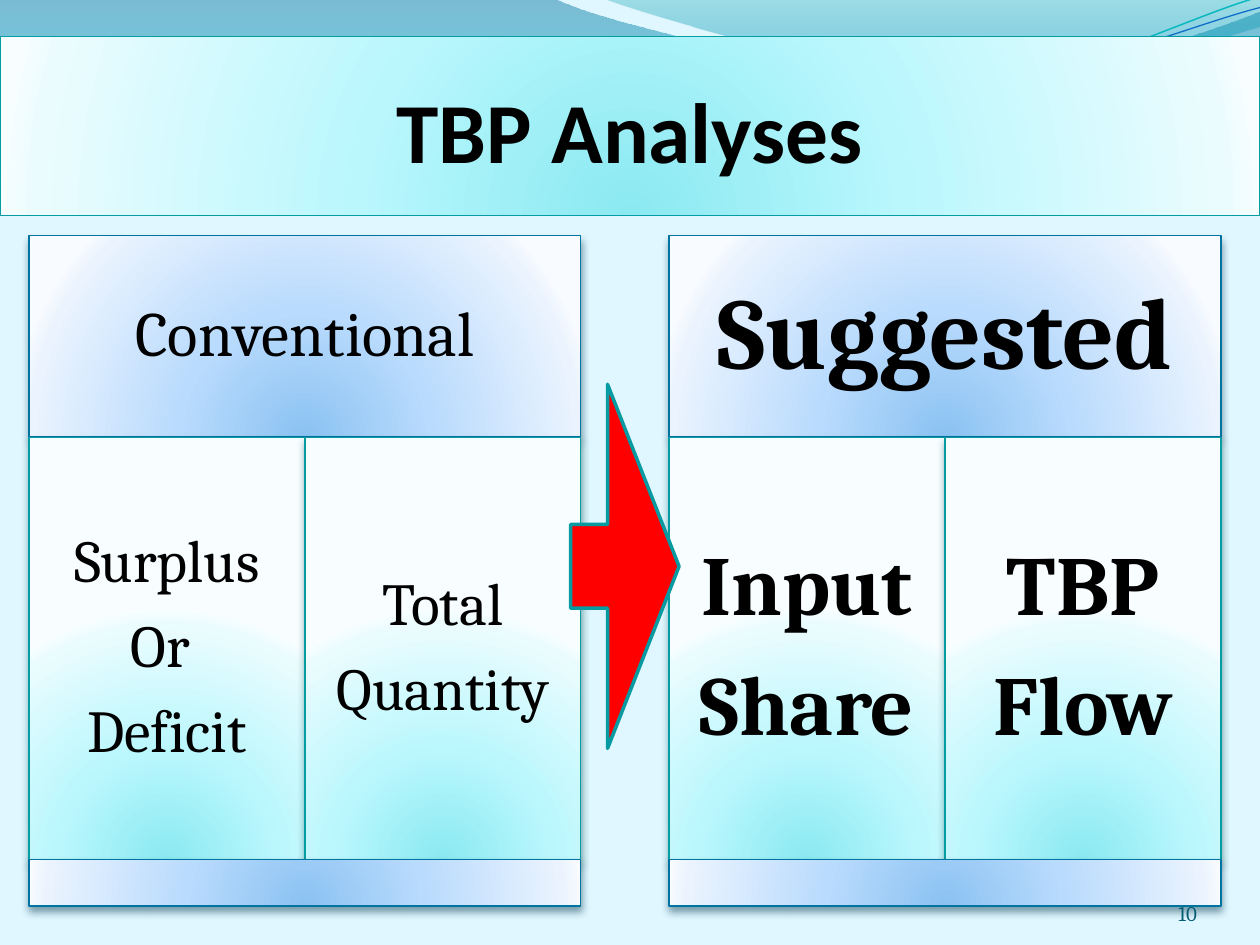
from dataclasses import dataclass

from pptx import Presentation
from pptx import util as u
from pptx.dml.color import RGBColor
from pptx.enum import shapes, text
from pptx.oxml import parse_xml
from pptx.oxml.ns import nsdecls, qn

COLORS = {
    "background": "E0F7FF", "text": "000000", "number": "045D75",
    "arrow": "FF0000", "arrow_edge": "089AA1",
    "wave_teal": "0AB8BF", "wave_blue": "0F6FC6",
}


@dataclass(frozen=True)
class Theme:
    stops: tuple[tuple[int, str], ...]
    edge: str
    shadow: str


@dataclass(frozen=True)
class Label:
    lines: tuple[str, ...]
    size: float
    inset: float
    bold: bool = False


@dataclass(frozen=True)
class Panel:
    left: float
    header: Label
    cells: tuple[Label, Label]


@dataclass(frozen=True)
class Wave:
    """Points in inches; a 2-item step is a line, a 6-item step a Bezier curve."""
    start: tuple[float, float]
    steps: tuple[tuple[float, ...], ...]
    stops: tuple[tuple[int, str, int], ...] = ()
    edge: str = ""
    weight: float = 0


AQUA = Theme(((0, "8BE9F1"), (43, "B9F7FD"), (93, "EAFCFE"), (100, "F8FEFF")),
             "069CA3", "024B4E")
BLUE = Theme(((0, "8BC2F1"), (43, "B9DBFD"), (93, "EAF3FE"), (100, "F8FBFF")),
             "0074A1", "00374C")

PANEL_WIDTH, PANEL_TOP = 4.38, 1.87
HEADER_HEIGHT, CELL_HEIGHT, FOOTER_HEIGHT = 1.6, 3.35, 0.37
PANELS = (
    Panel(0.23, Label(("Conventional",), 36, 0.15),
          (Label(("Surplus", "Or ", "Deficit"), 34, 0.14),
           Label(("Total", "Quantity"), 34, 0.14))),
    Panel(5.31, Label(("Suggested",), 58, 0.24, True),
          (Label(("Input", "Share"), 48, 0.2, True),
           Label(("TBP", "Flow"), 48, 0.2, True))),
)

WAVES = (
    Wave((0, 0), ((4.4, -0.01), (4.76, 0.17, 6.64, 0.63, 7.58, 0.63),
                  (8.53, 0.63, 9.58, 0.26, 10, 0.09), (10.01, 0.36),
                  (9.83, 0.44, 8.7, 0.76, 7.46, 0.75),
                  (6.22, 0.75, 3.82, 0.28, 2.57, 0.34),
                  (1.29, 0.36, 0.46, 0.83, -0.01, 1.13)),
         stops=((0, "0074A1", 45), (100, "00C6CF", 55))),
    Wave((4.79, -0.01), ((5.09, 0.11, 6.82, 0.62, 7.69, 0.65),
                         (8.56, 0.69, 9.61, 0.32, 10, 0.21), (10, 0)),
         stops=((0, "00A1A9", 30), (80, "008BBF", 45))),
    Wave((0, 1.11), ((0.48, 0.93, 1.58, 0.57, 2.77, 0.52),
                     (3.95, 0.47, 5.93, 0.89, 7.13, 0.8),
                     (8.33, 0.71, 9.38, 0.15, 9.98, -0.02)),
         edge="wave_teal", weight=0.85),
    Wave((0, 1.04), ((0.47, 0.96, 1.64, 0.61, 2.83, 0.56),
                     (4.03, 0.51, 5.97, 0.84, 7.17, 0.75),
                     (8.36, 0.67, 9.41, 0.21, 10, 0.06)),
         edge="wave_blue", weight=0.75),
)


def set_gradient(shape, stops, direction: str) -> None:
    stop_xml = "".join(
        f'<a:gs pos="{pos * 1000}"><a:srgbClr val="{color}">'
        f'<a:alpha val="{(alpha[0] if alpha else 100) * 1000}"/></a:srgbClr></a:gs>'
        for pos, color, *alpha in stops)
    shape.fill.background()
    properties = shape.element.spPr
    properties.replace(properties.find(qn("a:noFill")), parse_xml(
        f'<a:gradFill {nsdecls("a")} rotWithShape="1">'
        f"<a:gsLst>{stop_xml}</a:gsLst>{direction}</a:gradFill>"))


def set_edge(shape, color: str, weight: float) -> None:
    shape.line.color.rgb = RGBColor.from_string(color)
    shape.line.width = u.Pt(weight)


def apply_theme(shape, theme: Theme) -> None:
    """Radial glow from the bottom edge and a thin outline."""
    set_gradient(shape, theme.stops,
                 '<a:path path="circle"><a:fillToRect l="50000" t="130000" '
                 'r="50000" b="-30000"/></a:path>')
    set_edge(shape, theme.edge, 0.75)
    shape.shadow.inherit = False


def add_shadow(shape, color: str) -> None:
    shape.element.spPr.find(qn("a:effectLst")).append(parse_xml(
        f'<a:outerShdw {nsdecls("a")} blurRad="{u.Pt(4.5)}" dist="{u.Pt(3)}" '
        f'dir="5400000" rotWithShape="0"><a:srgbClr val="{color}">'
        '<a:alpha val="48000"/></a:srgbClr></a:outerShdw>'))


def set_frame(frame, anchor, insets: tuple[float, float, float, float]) -> None:
    left, top, right, bottom = map(u.Inches, insets)
    settings = {"word_wrap": True, "auto_size": text.MSO_AUTO_SIZE.NONE,
                "vertical_anchor": anchor, "margin_left": left, "margin_top": top,
                "margin_right": right, "margin_bottom": bottom}
    for name, value in settings.items():
        setattr(frame, name, value)


def write(paragraph, words: str, align, color: str = "text", **font) -> None:
    run = paragraph.add_run()
    run.text = words
    paragraph.alignment = align
    for name, value in font.items():
        setattr(run.font, name, value)
    run.font.color.rgb = RGBColor.from_string(COLORS[color])


def draw_wave(slide, wave: Wave) -> None:
    points = [(u.Inches(step[i]), u.Inches(step[i + 1]))
              for step in wave.steps for i in range(0, len(step), 2)]
    builder = slide.shapes.build_freeform(*map(u.Inches, wave.start))
    builder.add_line_segments(points, close=bool(wave.stops))
    shape = builder.convert_to_shape()

    # Join each three segments of a curved step into one Bezier curve
    segments = iter(list(shape.element.iter(qn("a:lnTo"))))
    for step in wave.steps:
        first = next(segments)
        if len(step) == 6:
            curve = parse_xml(f'<a:cubicBezTo {nsdecls("a")}/>')
            first.addprevious(curve)
            for segment in (first, next(segments), next(segments)):
                curve.append(segment[0])
                segment.getparent().remove(segment)

    shape.shadow.inherit = False
    if wave.stops:
        set_gradient(shape, wave.stops, '<a:lin ang="5400000" scaled="0"/>')
        shape.line.fill.background()
    else:
        shape.fill.background()
        set_edge(shape, COLORS[wave.edge], wave.weight)


def draw_box(slide, left: float, top: float, width: float, height: float,
             theme: Theme, label: Label | None = None) -> None:
    box = slide.shapes.add_shape(shapes.MSO_SHAPE.RECTANGLE,
                                 *map(u.Inches, (left, top, width, height)))
    apply_theme(box, theme)
    add_shadow(box, theme.shadow)
    if label is None:
        return
    frame = box.text_frame
    set_frame(frame, text.MSO_ANCHOR.MIDDLE, (label.inset,) * 4)
    for i, line in enumerate(label.lines):
        paragraph = frame.add_paragraph() if i else frame.paragraphs[0]
        paragraph.line_spacing = 0.9
        paragraph.space_after = u.Pt(0.35 * label.size)
        write(paragraph, line, text.PP_ALIGN.CENTER, name="Cambria",
              size=u.Pt(label.size), bold=label.bold)


def draw_panel(slide, panel: Panel) -> None:
    cells_top = PANEL_TOP + HEADER_HEIGHT
    cell_width = PANEL_WIDTH / len(panel.cells)
    draw_box(slide, panel.left, PANEL_TOP, PANEL_WIDTH, HEADER_HEIGHT, BLUE, panel.header)
    for i, cell in enumerate(panel.cells):
        draw_box(slide, panel.left + i * cell_width, cells_top, cell_width,
                 CELL_HEIGHT, AQUA, cell)
    draw_box(slide, panel.left, cells_top + CELL_HEIGHT, PANEL_WIDTH, FOOTER_HEIGHT, BLUE)


def main() -> None:
    deck = Presentation()
    deck.slide_width, deck.slide_height = u.Inches(10), u.Inches(7.5)
    slide = deck.slides.add_slide(deck.slide_layouts[5])
    slide.background.fill.solid()
    slide.background.fill.fore_color.rgb = RGBColor.from_string(COLORS["background"])

    # Waves along the top edge
    for wave in WAVES:
        draw_wave(slide, wave)

    # Title banner, brought in front of the waves
    title = slide.shapes.title
    title.element.getparent().append(title.element)
    title.left, title.top, title.width, title.height = map(u.Inches, (0, 0.29, 10, 1.42))
    apply_theme(title, AQUA)
    set_frame(title.text_frame, text.MSO_ANCHOR.MIDDLE, (0, 0.05, 0, 0))
    write(title.text_frame.paragraphs[0], "TBP Analyses", text.PP_ALIGN.CENTER,
          name="Calibri", size=u.Pt(48.8), bold=True)

    # Conventional and suggested analyses
    for panel in PANELS:
        draw_panel(slide, panel)

    # Arrow from one to the other
    arrow = slide.shapes.add_shape(shapes.MSO_SHAPE.RIGHT_ARROW,
                                   *map(u.Inches, (4.53, 3.05, 0.86, 2.89)))
    arrow.adjustments[0], arrow.adjustments[1] = 0.23, 0.66
    arrow.shadow.inherit = False
    arrow.fill.solid()
    arrow.fill.fore_color.rgb = RGBColor.from_string(COLORS["arrow"])
    set_edge(arrow, COLORS["arrow_edge"], 2)

    # Slide number
    number = slide.shapes.add_textbox(*map(u.Inches, (8.67, 6.95, 0.83, 0.4)))
    set_frame(number.text_frame, text.MSO_ANCHOR.BOTTOM, (0, 0, 0, 0))
    write(number.text_frame.paragraphs[0], "10", text.PP_ALIGN.RIGHT, "number",
          name="Cambria", size=u.Pt(12))

    deck.save("out.pptx")


if __name__ == "__main__":
    main()
